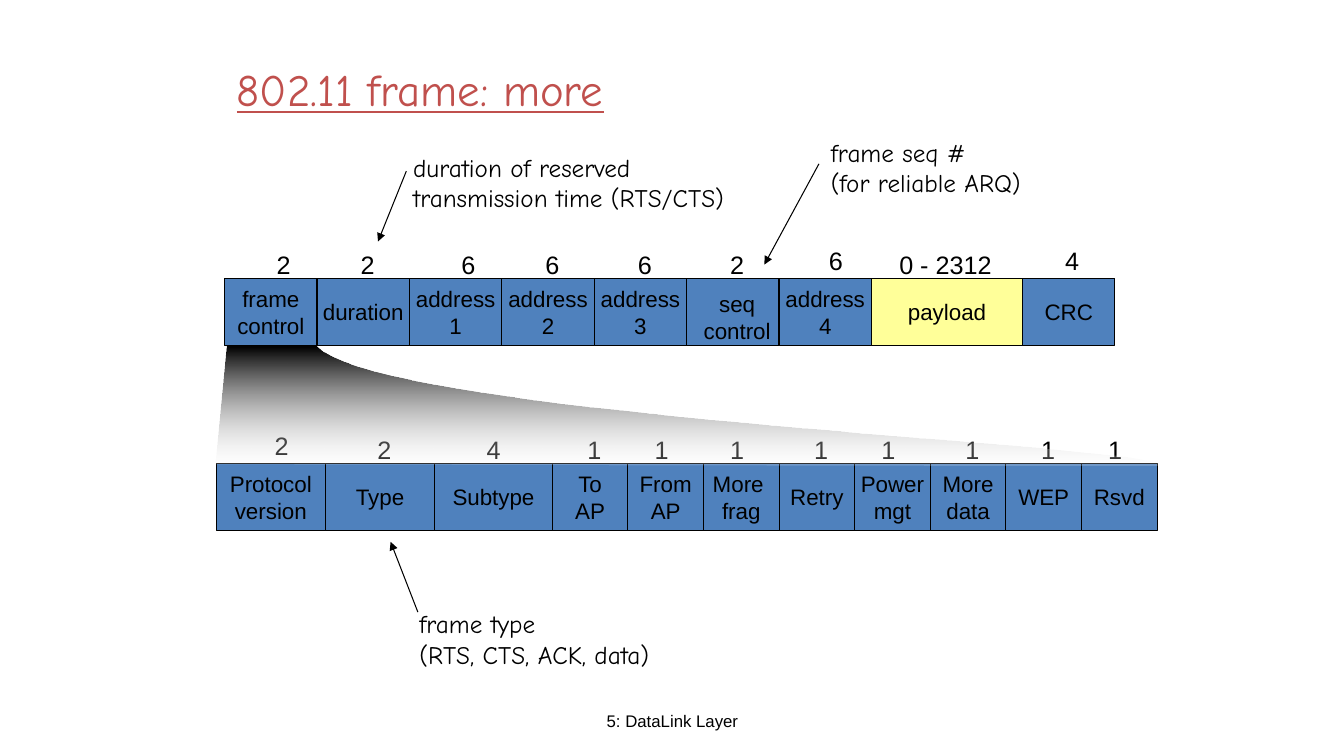
import lxml.etree
import pptx
import pptx.dml.color
import pptx.enum.shapes
import pptx.enum.text
import pptx.oxml.ns
import pptx.util

PX = 9525  # 96 px to the inch
BLACK = pptx.dml.color.RGBColor(0x00, 0x00, 0x00)
WHITE = pptx.dml.color.RGBColor(0xFF, 0xFF, 0xFF)
BLUE = pptx.dml.color.RGBColor(0x4F, 0x81, 0xBD)
YELLOW = pptx.dml.color.RGBColor(0xFF, 0xFF, 0x99)
RED = pptx.dml.color.RGBColor(0xC0, 0x50, 0x4D)
ALIGN = pptx.enum.text.PP_ALIGN
ANCHOR = pptx.enum.text.MSO_ANCHOR
AUTO_SIZE = pptx.enum.text.MSO_AUTO_SIZE

# label, width, length, left of length
FRAME_FIELDS = [
    ("frame\ncontrol", 88, "2", 254),
    ("duration", 88, "2", 334),
    ("address\n1", 88, "6", 430),
    ("address\n2", 88, "6", 510),
    ("address\n3", 88, "6", 598),
    ("", 88, "2", 686),
    ("address\n4", 88, "6", 780),
    ("payload", 144, "0 - 2312", 847),
    ("CRC", 88, "4", 1005),
]
CONTROL_FIELDS = [
    ("Protocol\nversion", 104, "2", 252),
    ("Type", 104, "2", 350),
    ("Subtype", 112, "4", 454),
    ("To\nAP", 72, "1", 550),
    ("From\nAP", 72, "1", 614),
    ("More \nfrag", 72, "1", 686),
    ("Retry", 72, "1", 766),
    ("Power\nmgt", 72, "1", 830),
    ("More\ndata", 72, "1", 910),
    ("WEP", 72, "1", 982),
    ("Rsvd", 72, "1", 1046),
]


def write_text(frame, text, font="Arial", size=18, color=BLACK, align=ALIGN.LEFT,
               anchor=ANCHOR.TOP, wrap=False, grow=False, underline=None):
    frame.word_wrap = wrap
    frame.auto_size = AUTO_SIZE.SHAPE_TO_FIT_TEXT if grow else AUTO_SIZE.NONE
    frame.vertical_anchor = anchor
    for index, line in enumerate(text.split("\n")):
        paragraph = frame.add_paragraph() if index else frame.paragraphs[0]
        paragraph.alignment = align
        run = paragraph.add_run()
        run.text = line
        run.font.name = font
        run.font.size = pptx.util.Pt(size)
        run.font.color.rgb = color
        run.font.underline = underline


def add_element(parent, tag, **attributes):
    return lxml.etree.SubElement(parent, pptx.oxml.ns.qn(tag), **attributes)


def bezier(start, control_1, control_2, end, steps=40):
    """Return the points after start along a cubic curve."""
    points = []
    for step in range(1, steps + 1):
        t = step / steps
        weights = ((1 - t) ** 3, 3 * t * (1 - t) ** 2, 3 * t * t * (1 - t), t ** 3)
        corners = (start, control_1, control_2, end)
        points.append(tuple(sum(weight * corner[axis] for weight, corner in zip(weights, corners))
                            for axis in (0, 1)))
    return points


class FrameSlide:
    note_font = "Comic Neue"
    line_width = pptx.util.Pt(0.75)

    def __init__(self, presentation):
        self.slide = presentation.slides.add_slide(presentation.slide_layouts[5])
        self.shapes = self.slide.shapes

    def title(self, text, *box):
        title = self.shapes.title
        title.left, title.top, title.width, title.height = (length * PX for length in box)
        write_text(title.text_frame, text, font=self.note_font, size=32, color=RED,
                   anchor=ANCHOR.MIDDLE, wrap=True, underline=True)

    def text(self, text, *box, **text_format):
        shape = self.shapes.add_textbox(*(length * PX for length in box))
        write_text(shape.text_frame, text, **text_format)

    def note(self, text, *box):
        self.text(text, *box, font=self.note_font, grow=True)

    def field(self, label, left, top, width, fill):
        shape = self.shapes.add_shape(pptx.enum.shapes.MSO_SHAPE.RECTANGLE,
                                      left * PX, top * PX, width * PX, 64 * PX)
        shape.shadow.inherit = False
        shape.fill.solid()
        shape.fill.fore_color.rgb = fill
        shape.line.color.rgb = BLACK
        shape.line.width = self.line_width
        if label:
            write_text(shape.text_frame, label, size=16, align=ALIGN.CENTER,
                       anchor=ANCHOR.MIDDLE)

    def field_row(self, fields, left, top, raised):
        """Draw adjoining fields and their lengths; raised lists the lengths set higher."""
        for index, (label, width, length, length_left) in enumerate(fields):
            self.field(label, left, top, width, YELLOW if label == "payload" else BLUE)
            left += width
            length_top = top - (36 if index in raised else 32)
            self.text(length, length_left, length_top, 107 if len(length) > 1 else 33, 38,
                      grow=True)

    def fading_outline(self, points):
        start, *others = [(round(x * PX), round(y * PX)) for x, y in points]
        builder = self.shapes.build_freeform(*start, scale=1.0)
        builder.add_line_segments(others, close=True)
        shape = builder.convert_to_shape()
        shape.shadow.inherit = False
        shape.line.fill.background()
        shape.fill.gradient()
        shape.fill.gradient_angle = 270
        first, last = shape.fill.gradient_stops
        first.color.rgb, last.color.rgb = BLACK, WHITE
        first.position, last.position = 0, 1
        white = shape._element.spPr.findall(".//" + pptx.oxml.ns.qn("a:srgbClr"))[-1]
        add_element(white, "a:alpha", val="18000")

    def arrow(self, *ends):
        connector = self.shapes.add_connector(pptx.enum.shapes.MSO_CONNECTOR.STRAIGHT,
                                              *(length * PX for length in ends))
        connector.line.color.rgb = BLACK
        connector.line.width = self.line_width
        properties = connector._element.spPr
        add_element(properties.find(pptx.oxml.ns.qn("a:ln")), "a:tailEnd", type="triangle")
        add_element(properties, "a:effectLst")


def main():
    presentation = pptx.Presentation()
    presentation.slide_width = 1280 * PX
    presentation.slide_height = 720 * PX
    slide = FrameSlide(presentation)

    slide.title("802.11 frame: more", 216, 24, 816, 120)
    slide.text("5: DataLink Layer", 438, 667, 405, 38, size=12, align=ALIGN.CENTER,
               anchor=ANCHOR.MIDDLE, wrap=True)
    slide.field_row(FRAME_FIELDS, 214, 265, raised=(6, 8))
    slide.text("seq\ncontrol", 660, 272, 84, 61, size=16, align=ALIGN.CENTER, grow=True)
    slide.field_row(CONTROL_FIELDS, 206, 441, raised=(0,))
    slide.fading_outline([(216, 330), (205, 441), (1104, 443)]
                         + bezier((1104, 443), (1120, 423), (368, 398), (302, 330)))

    slide.note("duration of reserved\ntransmission time (RTS/CTS)", 384, 140, 348, 67)
    slide.arrow(387, 163, 360, 230)
    slide.note("frame seq #\n(for reliable ARQ)", 782, 126, 226, 67)
    slide.arrow(780, 156, 728, 252)
    slide.note("frame type\n(RTS, CTS, ACK, data)", 390, 575, 271, 67)
    slide.arrow(398, 583, 372, 516)

    presentation.save("out.pptx")


if __name__ == "__main__":
    main()
